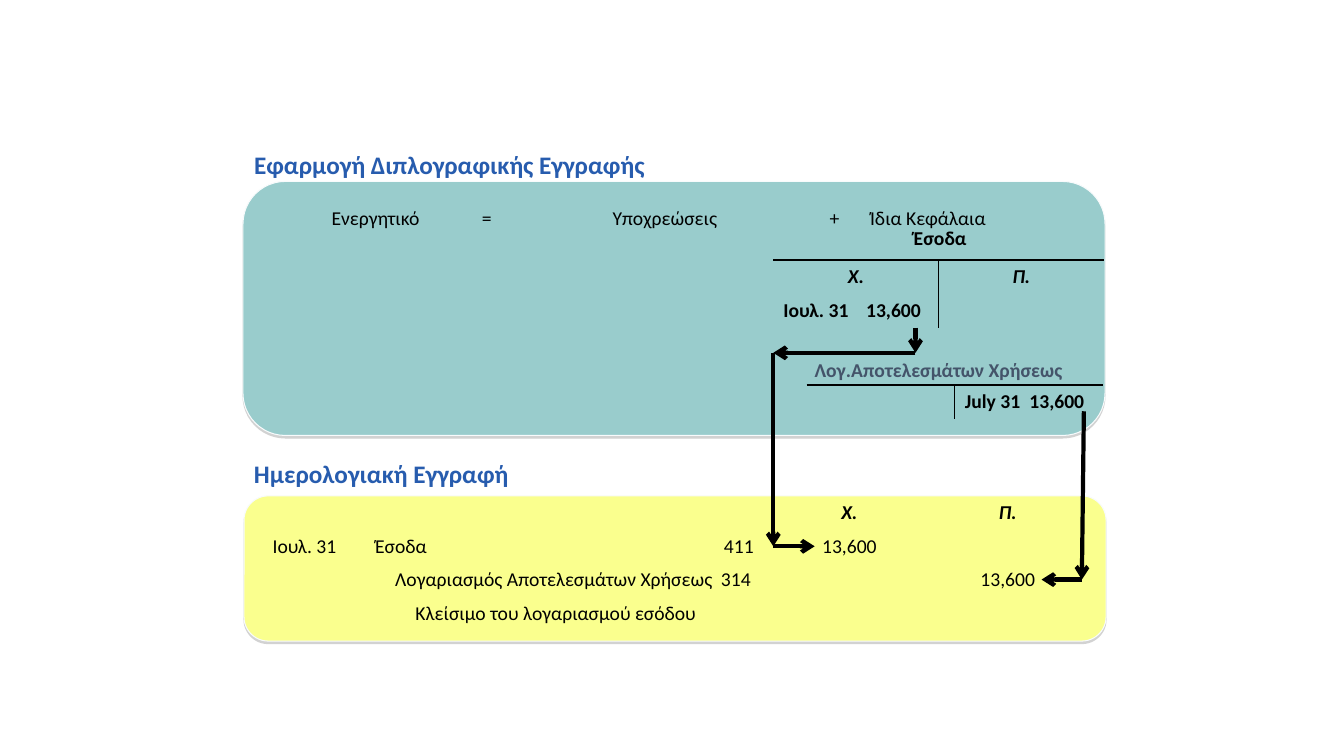
"""Builds a slide on the closing entry of a revenue account."""
import lxml.etree
import pptx
import pptx.dml.color
import pptx.enum.shapes
import pptx.enum.text
import pptx.oxml.ns
import pptx.util

Inches = pptx.util.Inches
Pt = pptx.util.Pt
RGBColor = pptx.dml.color.RGBColor
PP_ALIGN = pptx.enum.text.PP_ALIGN
qn = pptx.oxml.ns.qn

BLACK = RGBColor(0x00, 0x00, 0x00)
HEADING_BLUE = RGBColor(0x27, 0x5C, 0xAE)
SLATE = RGBColor(0x44, 0x54, 0x6A)
TEAL = RGBColor(0x99, 0xCC, 0xCC)
YELLOW = RGBColor(0xFA, 0xFF, 0x8E)
PANEL_EDGE = RGBColor(0xF8, 0xFB, 0xFC)
SHADOW_GREY = RGBColor(0x80, 0x80, 0x80)
FONT = "Calibri"
PLAIN_TABLE_STYLE = "{2D5ABB26-0587-4C30-8999-92F81FD0307C}"


def add_child(parent, tag, **attributes):
    """Append a DrawingML element and return it."""
    child = lxml.etree.SubElement(parent, qn(tag))
    for name, value in attributes.items():
        child.set(name, str(value))
    return child


def format_paragraph(paragraph, size, color, bold=False, italic=False):
    """Set the font of a whole paragraph."""
    font = paragraph.font
    font.name, font.size, font.bold, font.italic = FONT, Pt(size), bold, italic
    font.color.rgb = color


def set_label(shape, text, left, top, width, height, size, color):
    """Place a shape and give it one bold, left-aligned line."""
    shape.left, shape.top = Inches(left), Inches(top)
    shape.width, shape.height = Inches(width), Inches(height)
    frame = shape.text_frame
    frame.text = text
    frame.word_wrap = True
    frame.vertical_anchor = pptx.enum.text.MSO_ANCHOR.TOP
    paragraph = frame.paragraphs[0]
    paragraph.alignment = PP_ALIGN.LEFT
    format_paragraph(paragraph, size, color, bold=True)


def add_label(slide, text, left, top, width, height, size, color):
    """Add a text box with one bold line."""
    box = slide.shapes.add_textbox(0, 0, 0, 0)
    set_label(box, text, left, top, width, height, size, color)


def add_panel(slide, left, top, width, height, fill):
    """Add a rounded panel with a thin lower shadow."""
    panel = slide.shapes.add_shape(
        pptx.enum.shapes.MSO_SHAPE.ROUNDED_RECTANGLE,
        Inches(left), Inches(top), Inches(width), Inches(height))
    panel.shadow.inherit = False
    panel.fill.solid()
    panel.fill.fore_color.rgb = fill
    panel.line.color.rgb = PANEL_EDGE
    panel.line.width = Pt(0.75)
    effects = panel._element.spPr.find(qn("a:effectLst"))
    shadow = add_child(effects, "a:outerShdw", blurRad=0, dist=Pt(1.8),
                       dir=90 * 60000, rotWithShape=0)
    color = add_child(shadow, "a:srgbClr", val=SHADOW_GREY)
    add_child(color, "a:alpha", val=35000)


def add_table(slide, left, top, columns, row_height, rows=1):
    """Add a table without fills or borders."""
    frame = slide.shapes.add_table(
        rows, len(columns), Inches(left), Inches(top),
        Inches(sum(columns)), Inches(row_height * rows))
    table = frame.table
    table.first_row = table.horz_banding = False
    table._tbl.tblPr.find(qn("a:tableStyleId")).text = PLAIN_TABLE_STYLE
    for column, width in zip(table.columns, columns):
        column.width = Inches(width)
    for row in table.rows:
        row.height = Inches(row_height)
    for cell in table.iter_cells():
        cell.fill.background()
        cell.margin_top = cell.margin_bottom = 0
    return table


def fill_cell(table, row, column, text, center=False, indent=0.1, tab=None,
              bold=False, italic=False):
    """Write one line in a cell, with an optional tab stop in inches."""
    cell = table.cell(row, column)
    cell.margin_top = cell.margin_bottom = Inches(0.05)
    cell.margin_left = Inches(indent)
    cell.text = text
    paragraph = cell.text_frame.paragraphs[0]
    paragraph.alignment = PP_ALIGN.CENTER if center else PP_ALIGN.LEFT
    if tab:
        stops = add_child(paragraph._p.get_or_add_pPr(), "a:tabLst")
        add_child(stops, "a:tab", pos=Inches(tab), algn="l")
    format_paragraph(paragraph, 14, BLACK, bold, italic)


def draw_account_lines(table):
    """Rule the top and the middle of a two-column T-account."""
    for row in range(len(table.rows)):
        for column, side in enumerate(("a:lnR", "a:lnL")):
            properties = table.cell(row, column)._tc.get_or_add_tcPr()
            sides = [side, "a:lnT"] if row == 0 else [side]
            for position, tag in enumerate(sides):
                line = add_child(properties, tag, w=Pt(1))
                fill = add_child(line, "a:solidFill")
                add_child(fill, "a:srgbClr", val=BLACK)
                properties.insert(position, line)


def add_arrows(slide, *points):
    """Join successive points with thick arrows."""
    for start, end in zip(points, points[1:]):
        connector = slide.shapes.add_connector(
            pptx.enum.shapes.MSO_CONNECTOR.STRAIGHT,
            *(Inches(length) for length in start + end))
        connector.line.color.rgb = BLACK
        connector.line.width = Pt(3)
        add_child(connector.line._get_or_add_ln(), "a:tailEnd", type="arrow")
        add_child(connector._element.spPr, "a:effectLst")


def add_equation(slide):
    """Add the accounting equation and the revenue heading."""
    equation = add_table(slide, 2.42, 2, (2.18, 0.46, 3.07, 0.32, 2.15), 0.41)
    fill_cell(equation, 0, 0, "Ενεργητικό", center=True, indent=0.53)
    fill_cell(equation, 0, 1, "=", indent=0.18)
    fill_cell(equation, 0, 2, "Υποχρεώσεις", center=True)
    fill_cell(equation, 0, 3, "+")
    fill_cell(equation, 0, 4, "Ίδια Κεφάλαια", indent=0.18)
    heading = add_table(slide, 2.5, 2.2, (2.73,) * 3, 0.8)
    fill_cell(heading, 0, 2, "Έσοδα", center=True, bold=True)


def add_accounts(slide):
    """Add the revenue and income summary T-accounts."""
    revenue = add_table(slide, 7.67, 2.58, (1.64, 1.64), 0.33, rows=2)
    for column, text in enumerate(("Χ.", "Π.")):
        fill_cell(revenue, 0, column, text, center=True, bold=True, italic=True)
    fill_cell(revenue, 1, 0, "Ιουλ. 31\t13,600", tab=0.82, bold=True)
    draw_account_lines(revenue)
    summary = add_table(slide, 8, 3.82, (1.47, 1.47), 0.33)
    fill_cell(summary, 0, 1, "July 31\t13,600", tab=0.64, bold=True)
    draw_account_lines(summary)
    add_label(slide, "Λογ.Αποτελεσμάτων Χρήσεως", 7.98, 3.5, 3.19, 0.33, 14, SLATE)


def add_journal(slide):
    """Add the journal entry."""
    journal = add_table(slide, 2.42, 4.92, (1.2, 3.98, 0.55, 1.1, 1.49), 0.33, rows=5)
    for row, first, last in ((0, 2, 3), (1, 2, 3), (2, 2, 3), (3, 1, 3), (4, 1, 2)):
        journal.cell(row, first).merge(journal.cell(row, last))
    for column, text in ((2, "Χ."), (4, "Π.")):
        fill_cell(journal, 0, column, text, center=True, bold=True, italic=True)
    for row, column, text in ((1, 0, "Ιουλ. 31"), (1, 2, "13,600"), (2, 4, "13,600")):
        fill_cell(journal, row, column, text, center=True)
    fill_cell(journal, 1, 1, "Έσοδα\t411", tab=3.46)
    fill_cell(journal, 2, 1, "Λογαριασμός Αποτελεσμάτων Χρήσεως\t314", indent=0.3, tab=3.23)
    fill_cell(journal, 3, 1, "Κλείσιμο του λογαριασμού εσόδου", indent=0.5)


def main():
    """Build and save the presentation."""
    presentation = pptx.Presentation()
    presentation.slide_width, presentation.slide_height = Inches(13.33), Inches(7.5)
    slide = presentation.slides.add_slide(presentation.slide_layouts[5])
    set_label(slide.shapes.title, "Εφαρμογή Διπλογραφικής Εγγραφής",
              2.42, 1.43, 5.58, 0.4, 18, HEADING_BLUE)
    add_panel(slide, 2.41, 1.8, 8.55, 2.52, TEAL)
    add_equation(slide)
    add_accounts(slide)
    add_panel(slide, 2.42, 4.92, 8.55, 1.44, YELLOW)
    add_journal(slide)
    add_label(slide, "Ημερολογιακή Εγγραφή", 2.42, 4.5, 3.49, 0.4, 18, HEADING_BLUE)
    add_arrows(slide, (9.08, 3.25), (9.08, 3.5), (7.67, 3.5), (7.67, 5.42), (8.08, 5.42))
    add_arrows(slide, (10.75, 4.08), (10.73, 5.75), (10.33, 5.75))
    presentation.save("out.pptx")


if __name__ == "__main__":
    main()
